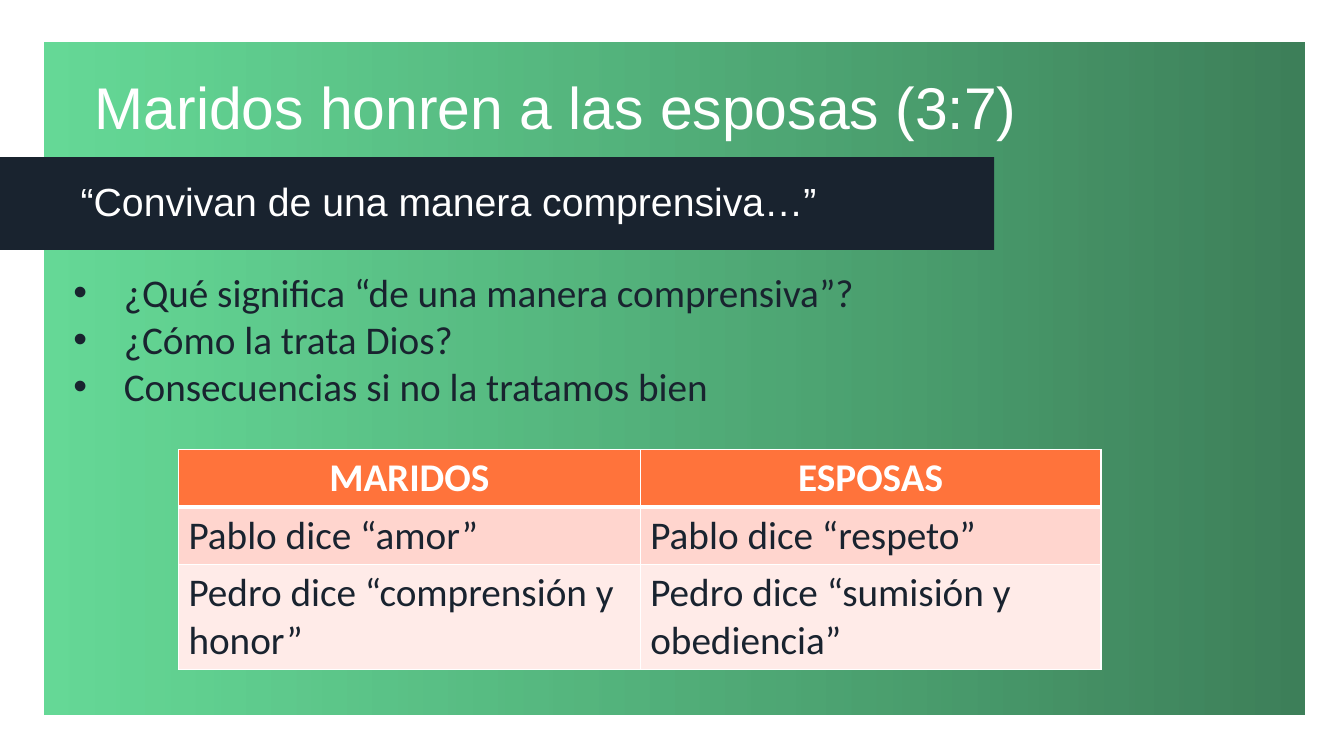
from pptx import Presentation
from pptx.dml.color import RGBColor
from pptx.enum import shapes, text
from pptx.oxml import ns
from pptx.util import Inches, Pt
from lxml import etree

NAVY = RGBColor(0x19, 0x23, 0x2F)
WHITE = RGBColor(0xFF, 0xFF, 0xFF)
MINT = RGBColor(0x2C, 0xCB, 0x70)
GREEN = RGBColor(0x16, 0x66, 0x38)
ORANGE = RGBColor(0xFF, 0x73, 0x3B)
ROSE = RGBColor(0xFF, 0xD5, 0xCE)
BLUSH = RGBColor(0xFF, 0xEB, 0xE8)


def style(para, font, size, color, bold=False):
    for run in para.runs:
        run.font.name, run.font.size = font, Pt(size)
        run.font.color.rgb, run.font.bold = color, bold


def add(parent, tag, **attrs):
    node = etree.SubElement(parent, ns.qn(tag))
    for key, val in attrs.items():
        node.set(key, str(val))
    return node


deck = Presentation()
deck.slide_width, deck.slide_height = Inches(13.33), Inches(7.5)
slide = deck.slides.add_slide(deck.slide_layouts[0])

# Green gradient panel, behind everything
panel = slide.shapes.add_shape(shapes.MSO_SHAPE.RECTANGLE, Inches(0.44), Inches(0.42),
                               Inches(12.5), Inches(6.67))
panel.shadow.inherit = False
panel.line.fill.background()
panel.fill.gradient()
panel.fill.gradient_angle = 0
for stop, color, place, alpha in zip(panel.fill.gradient_stops, (MINT, GREEN), (0, 1), (73, 83)):
    stop.color.rgb = color
    stop.position = place
for node, alpha in zip(panel._element.spPr.iter(ns.qn("a:srgbClr")), (73, 83)):
    add(node, "a:alpha", val=alpha * 1000)
slide.shapes[0]._element.addprevious(panel._element)

# Title and subtitle band
title, band = slide.placeholders
heads = (
    (title, "Maridos honren a las esposas (3:7)", (0.59, 0.78, 12.13, 0.64), 0.25, 42),
    (band, "“Convivan de una manera comprensiva…”", (0, 1.56, 9.86, 0.92), 0.7, 28),
)
for shape, words, box, indent, size in heads:
    shape.left, shape.top, shape.width, shape.height = [Inches(v) for v in box]
    frame = shape.text_frame
    frame.text = words
    frame.word_wrap = True
    frame.auto_size = text.MSO_AUTO_SIZE.NONE
    frame.vertical_anchor = text.MSO_ANCHOR.MIDDLE
    para = frame.paragraphs[0]
    para.alignment = text.PP_ALIGN.LEFT
    para.line_spacing = 0.9
    para.space_before = Pt(0)
    props = para._p.get_or_add_pPr()
    props.set("marL", str(Inches(indent)))
    props.set("indent", "0")
    style(para, "Arial", size, WHITE)
band.fill.solid()
band.fill.fore_color.rgb = NAVY

# Bullet list
points = ("¿Qué significa “de una manera comprensiva”?", "¿Cómo la trata Dios?",
          "Consecuencias si no la tratamos bien")
notes = slide.shapes.add_textbox(Inches(0.63), Inches(2.61), Inches(12.08), Inches(1.99))
notes.text_frame.word_wrap = True
notes.text_frame.text = "\n".join(points)
for para in notes.text_frame.paragraphs:
    props = para._p.get_or_add_pPr()
    props.set("marL", str(Inches(0.5)))
    props.set("indent", str(-Inches(0.5)))
    add(props, "a:buFont", typeface="Arial")
    add(props, "a:buChar", char="•")
    style(para, "Calibri", 28, NAVY)

# Table of husbands and wives
rows = (
    (("MARIDOS", "ESPOSAS"), 0.57, ORANGE),
    (("Pablo dice “amor”", "Pablo dice “respeto”"), 0.57, ROSE),
    (("Pedro dice “comprensión y honor”", "Pedro dice “sumisión y obediencia”"), 1.04, BLUSH),
)
table = slide.shapes.add_table(3, 2, Inches(1.77), Inches(4.46), Inches(9.15), Inches(2.18)).table
for col, width in zip(table.columns, (4.58, 4.57)):
    col.width = Inches(width)
for r, (words, height, color) in enumerate(rows):
    table.rows[r].height = Inches(height)
    for c, word in enumerate(words):
        cell = table.cell(r, c)
        cell.text = word
        para = cell.text_frame.paragraphs[0]
        para.alignment = text.PP_ALIGN.LEFT if r else text.PP_ALIGN.CENTER
        style(para, "Calibri", 28, NAVY if r else WHITE, r == 0)
        props = cell._tc.get_or_add_tcPr()
        for side in "LRTB":
            thick = (r, side) in ((0, "B"), (1, "T"))
            line = add(props, "a:ln" + side, w=Pt(3 if thick else 1))
            add(add(line, "a:solidFill"), "a:srgbClr", val=WHITE)
        cell.fill.solid()
        cell.fill.fore_color.rgb = color

deck.save("out.pptx")
